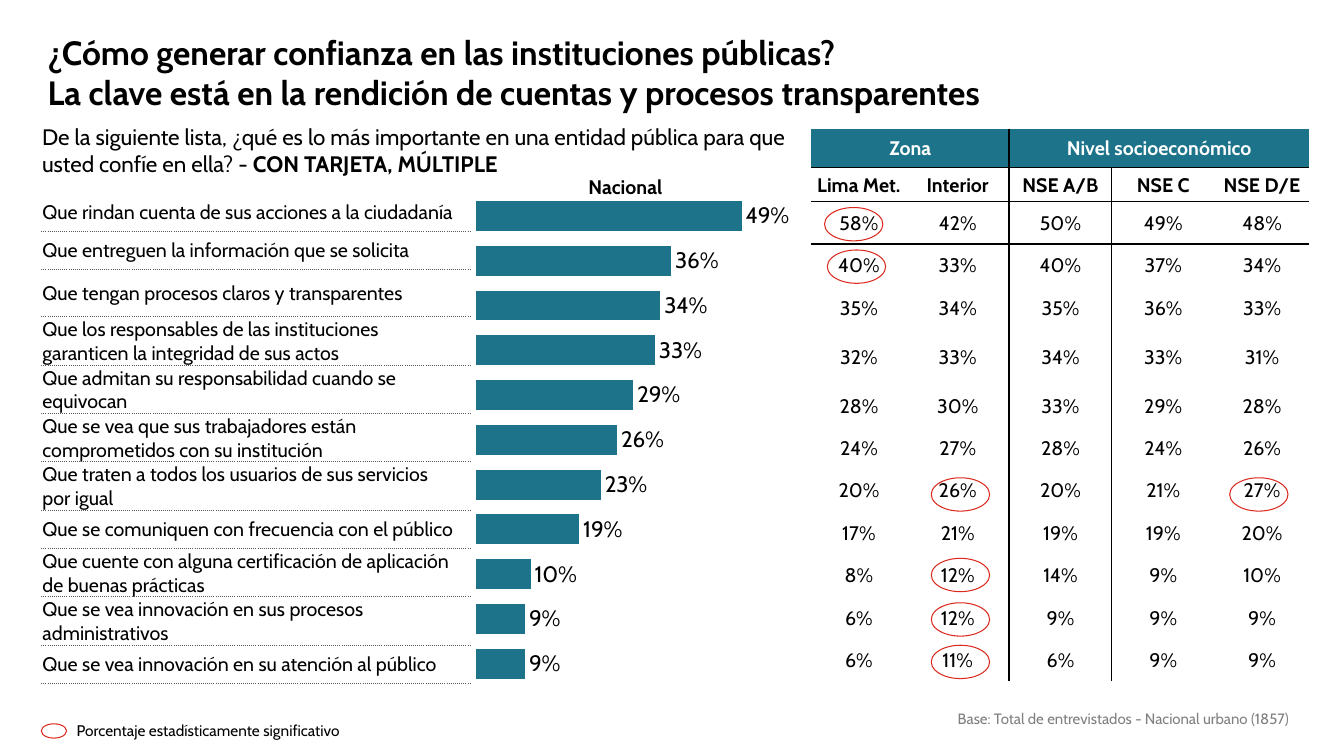
from dataclasses import dataclass
from lxml import etree
from pptx import Presentation
from pptx.chart.data import CategoryChartData
from pptx.dml.color import RGBColor
from pptx.enum.chart import XL_CHART_TYPE, XL_LABEL_POSITION
from pptx.enum.shapes import MSO_SHAPE
from pptx.enum.text import MSO_ANCHOR, PP_ALIGN
from pptx.oxml import parse_xml
from pptx.oxml.ns import nsdecls, qn
from pptx.util import Cm, Pt

BAR = XL_CHART_TYPE.BAR_CLUSTERED
OUT = XL_LABEL_POSITION.OUTSIDE_END
OVAL = MSO_SHAPE.OVAL
TOP, MID, LOW = MSO_ANCHOR.TOP, MSO_ANCHOR.MIDDLE, MSO_ANCHOR.BOTTOM
LEFT, MIDST, RIGHT = PP_ALIGN.LEFT, PP_ALIGN.CENTER, PP_ALIGN.RIGHT
SIDES = ("L", "R", "T", "B")
PLAIN = "{2D5ABB26-0587-4C30-8999-92F81FD0307C}"


@dataclass(frozen=True)
class Theme:
    font: str = "Cabin"
    ink: str = "000000"
    teal: str = "1C738A"
    red: str = "DC291E"
    gray: str = "808080"
    dots: str = "5A5A5A"
    white: str = "FFFFFF"
    title: float = 24
    lead: float = 16
    body: float = 14
    key: float = 11
    base: float = 10.7


THEME = Theme()

ITEMS = [
    ("Que rindan cuenta de sus acciones a la ciudadanía", 49, (58, 42, 50, 49, 48)),
    ("Que entreguen la información que se solicita", 36, (40, 33, 40, 37, 34)),
    ("Que tengan procesos claros y transparentes", 34, (35, 34, 35, 36, 33)),
    ("Que los responsables de las instituciones garanticen la integridad de sus actos",
     33, (32, 33, 34, 33, 31)),
    ("Que admitan su responsabilidad cuando se equivocan", 29, (28, 30, 33, 29, 28)),
    ("Que se vea que sus trabajadores están comprometidos con su institución",
     26, (24, 27, 28, 24, 26)),
    ("Que traten a todos los usuarios de sus servicios por igual",
     23, (20, 26, 20, 21, 27)),
    ("Que se comuniquen con frecuencia con el público", 19, (17, 21, 19, 19, 20)),
    ("Que cuente con alguna certificación de aplicación de buenas prácticas",
     10, (8, 12, 14, 9, 10)),
    ("Que se vea innovación en sus procesos administrativos", 9, (6, 12, 9, 9, 9)),
    ("Que se vea innovación en su atención al público", 9, (6, 11, 6, 9, 9)),
]
GROUPS = [("Zona", 0, 1), ("Nivel socioeconómico", 2, 4)]
HEADS = ["Lima Met.", "Interior", "NSE A/B", "NSE C", "NSE D/E"]
MARKS = [(20.78, 5.23), (23.47, 14.07), (20.85, 6.3), (23.47, 12.04),
         (23.47, 16.26), (23.47, 15.19), (30.99, 12.04)]


def tint(code):
    return RGBColor.from_string(code)


def style(font, size, color=THEME.ink, bold=False):
    font.name = THEME.font
    font.size = Pt(size)
    font.bold = bold
    font.color.rgb = tint(color)


def write(par, text, size, color=THEME.ink, bold=False):
    run = par.add_run()
    run.text = text
    style(run.font, size, color, bold)


def label(slide, box, lines, size, color=THEME.ink, align=LEFT,
          anchor=TOP, wrap=True, inset=(0.25, 0.13)):
    frame = slide.shapes.add_textbox(*map(Cm, box)).text_frame
    frame.word_wrap = wrap
    frame.vertical_anchor = anchor
    frame.margin_left = frame.margin_right = Cm(inset[0])
    frame.margin_top = frame.margin_bottom = Cm(inset[1])
    par = frame.paragraphs[0]
    par.alignment = align
    for row, runs in enumerate(lines):
        if row:
            par.add_line_break()
        for text, bold in runs:
            write(par, text, size, color, bold)
    return par


def ring(slide, box, fill=None):
    oval = slide.shapes.add_shape(OVAL, *map(Cm, box))
    oval.shadow.inherit = False
    if fill:
        oval.fill.solid()
        oval.fill.fore_color.rgb = tint(fill)
    else:
        oval.fill.background()
    oval.line.color.rgb = tint(THEME.red)
    oval.line.width = Pt(0.75)


def grid(slide, left, top, cols, rows):
    shape = slide.shapes.add_table(len(rows), len(cols), Cm(left), Cm(top),
                                   Cm(sum(cols)), Cm(sum(rows)))
    table = shape.table
    table.first_row = table.horz_banding = False
    table._tbl.tblPr.find(qn("a:tableStyleId")).text = PLAIN
    for col, width in zip(table.columns, cols):
        col.width = Cm(width)
    for row, height in zip(table.rows, rows):
        row.height = Cm(height)
    return table


def border(cell, sides, color, width, dash="solid"):
    props = cell._tc.get_or_add_tcPr()
    for spot, side in enumerate(s for s in SIDES if s in sides):
        line = parse_xml(
            f'<a:ln{side} {nsdecls("a")} w="{Pt(width)}"><a:solidFill>'
            f'<a:srgbClr val="{color}"/></a:solidFill>'
            f'<a:prstDash val="{dash}"/></a:ln{side}>')
        props.insert(spot, line)


def fill(cell, text, align=LEFT, color=THEME.ink, bold=False, back=None):
    cell.margin_left = cell.margin_right = cell.margin_top = Cm(0.03)
    cell.margin_bottom = 0
    cell.vertical_anchor = MID
    par = cell.text_frame.paragraphs[0]
    par.alignment = align
    if text:
        write(par, text, THEME.body, color, bold)
    else:
        style(par.font, THEME.body)
    if back:
        cell.fill.solid()
        cell.fill.fore_color.rgb = tint(back)
    else:
        cell.fill.background()


def reasons(slide):
    rows = [1.19 if n == 2 else 0.97 for n in range(len(ITEMS))]
    table = grid(slide, 1.04, 4.85, [10.44, 0.36], rows)
    for row, (text, _, _) in enumerate(ITEMS):
        for col, words in enumerate((text, "")):
            cell = table.cell(row, col)
            fill(cell, words)
            border(cell, "B", THEME.dots, 0.5, "sysDot")


def zones(slide):
    rows = [0.97, 0.86] + [1.39 if n == 3 else 1.07 for n in range(len(ITEMS))]
    table = grid(slide, 20.45, 3.25, [2.39, 2.59, 2.59, 2.59, 2.39], rows)
    for text, first, last in GROUPS:
        table.cell(0, first).merge(table.cell(0, last))
        fill(table.cell(0, first), text, MIDST, THEME.white, True, THEME.teal)
    for col, head in enumerate(HEADS):
        fill(table.cell(1, col), head, MIDST, bold=True)
        for row, (_, _, vals) in enumerate(ITEMS, 2):
            fill(table.cell(row, col), f"{vals[col]}%", MIDST)
        side = {1: "R", 2: "L"}.get(col, "")
        for row in range(len(rows)):
            ends = {0: "B", 1: "TB", 2: "T"}.get(row, "")
            border(table.cell(row, col), side + ends, THEME.ink, 1)


def place(chart, x, y, w, h):
    area = chart._chartSpace.chart.plotArea
    for old in area.findall(qn("c:layout")):
        area.remove(old)
    layout = etree.Element(qn("c:layout"))
    spot = etree.SubElement(layout, qn("c:manualLayout"))
    parts = [("layoutTarget", "inner"), ("xMode", "edge"), ("yMode", "edge"),
             ("x", x), ("y", y), ("w", w), ("h", h)]
    for name, val in parts:
        etree.SubElement(spot, qn(f"c:{name}")).set("val", str(val))
    area.insert(0, layout)


def bars(slide):
    data = CategoryChartData(number_format="0%")
    data.categories = [str(n + 1) for n in range(len(ITEMS))]
    data.add_series("Series 1", [val / 100 for _, val, _ in ITEMS])
    box = map(Cm, (11.91, 4.75, 9.63, 12.8))
    chart = slide.shapes.add_chart(BAR, *box, data).chart
    chart.has_legend = chart.has_title = False
    style(chart.font, THEME.lead)
    cats, vals = chart.category_axis, chart.value_axis
    cats.reverse_order = True
    vals.minimum_scale, vals.maximum_scale = 0, 0.6
    vals.has_major_gridlines = False
    cats.visible = vals.visible = False
    plot = chart.plots[0]
    plot.gap_width, plot.overlap = 50, -25
    plot.vary_by_categories = False
    paint = plot.series[0].format.fill
    paint.solid()
    paint.fore_color.rgb = tint(THEME.teal)
    plot.has_data_labels = True
    tags = plot.data_labels
    tags.show_value = True
    tags.position = OUT
    tags.number_format, tags.number_format_is_linked = "0%", False
    style(tags.font, THEME.lead)
    place(chart, 0.01, 0.01, 0.85, 0.97)


def main():
    deck = Presentation()
    deck.slide_width, deck.slide_height = Cm(33.87), Cm(19.05)
    slide = deck.slides.add_slide(deck.slide_layouts[6])
    base = label(slide, (15.09, 17.81, 17.65, 0.66),
                 [[("Base: Total de entrevistados - Nacional urbano (1857)", False)]],
                 THEME.base, THEME.gray, RIGHT)
    base.line_spacing = 0.9
    label(slide, (1.2, 0.71, 23.75, 2.13),
          [[("¿Cómo generar confianza en las instituciones públicas?", True)],
           [("La clave está en la rendición de cuentas y procesos transparentes", True)]],
          THEME.title, anchor=LOW, inset=(0, 0))
    label(slide, (0.81, 2.97, 19.35, 1.63),
          [[("De la siguiente lista, ¿qué es lo más importante en una entidad "
             "pública para que usted confíe en ella? - ", False),
            ("CON TARJETA, MÚLTIPLE", True)]], THEME.lead)
    reasons(slide)
    zones(slide)
    bars(slide)
    label(slide, (14.83, 4.42, 1.91, 1.3), [[("Nacional", True)]],
          THEME.body, wrap=False, inset=(0, 0))
    ring(slide, (1.04, 18.24, 0.64, 0.36), THEME.white)
    label(slide, (1.68, 18.03, 7.16, 0.74),
          [[("Porcentaje estadísticamente significativo", False)]],
          THEME.key, wrap=False)
    for left, top in MARKS:
        ring(slide, (left, top, 1.47, 0.84))
    deck.save("out.pptx")


if __name__ == "__main__":
    main()
